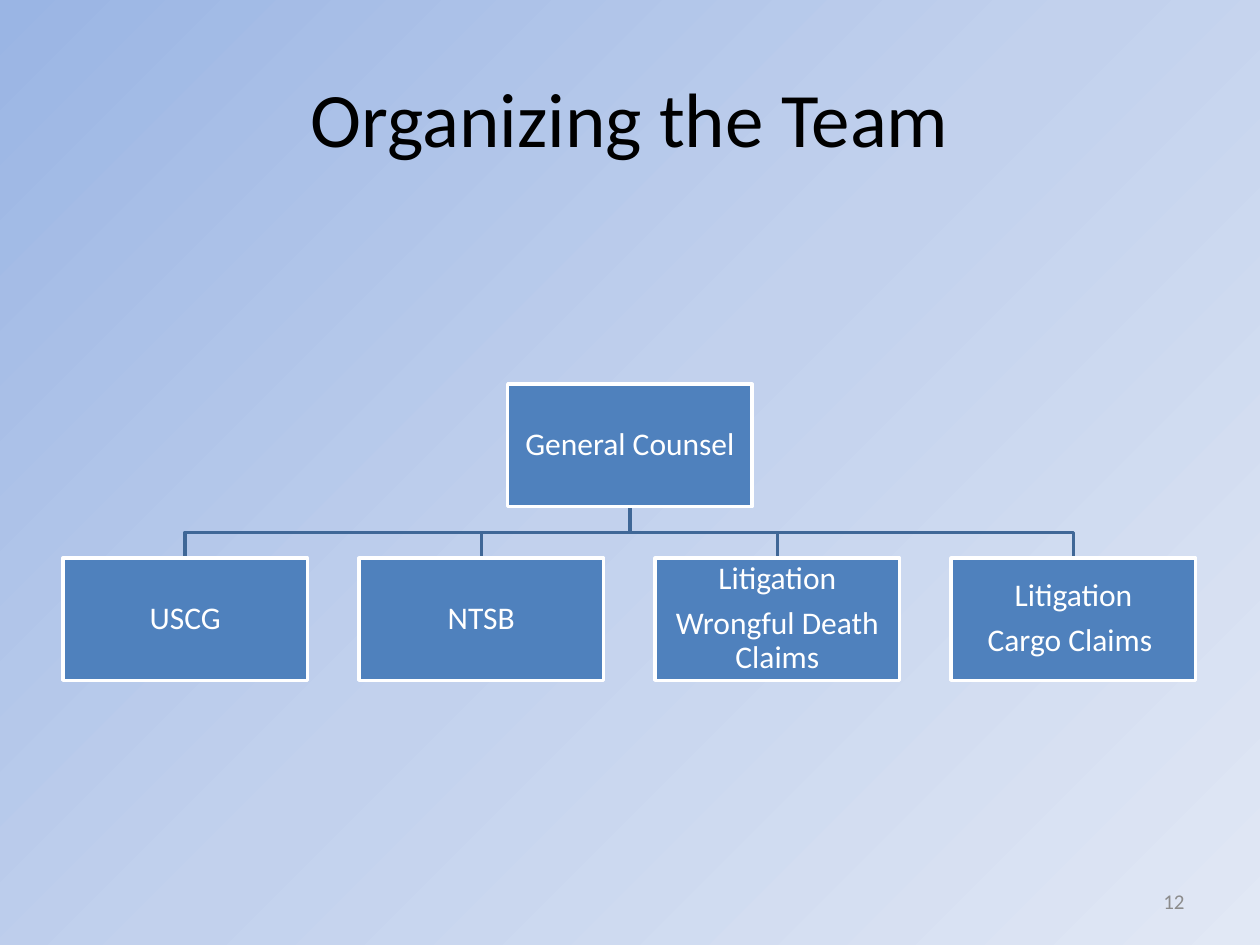
import copy
from dataclasses import dataclass

import pptx
import pptx.dml.color
import pptx.enum.shapes
import pptx.enum.text
import pptx.util

Inches, Pt = pptx.util.Inches, pptx.util.Pt
RGBColor = pptx.dml.color.RGBColor
ALIGN = pptx.enum.text.PP_ALIGN
MIDDLE = pptx.enum.text.MSO_ANCHOR.MIDDLE

BLACK = RGBColor(0x00, 0x00, 0x00)
WHITE = RGBColor(0xFF, 0xFF, 0xFF)
GRAY = RGBColor(0x8C, 0x8C, 0x8C)
BOX_BLUE = RGBColor(0x4F, 0x81, 0xBD)
LINE_BLUE = RGBColor(0x3F, 0x67, 0x97)
BACKGROUND = [
    (0, RGBColor(0x9A, 0xB5, 0xE4)),
    (0.5, RGBColor(0xC2, 0xD1, 0xED)),
    (1, RGBColor(0xE1, 0xE8, 0xF5)),
]

BOX_W, BOX_H = 1.94, 0.97
ROOT_TOP, TEAM_TOP = 3.05, 4.43
TEAM_LEFT, TEAM_PITCH = 0.5, 2.35


@dataclass
class Box:
    left: float
    top: float
    lines: list[str]

    @property
    def center(self) -> float:
        return self.left + BOX_W / 2


def write_text(sp, lines: list[str], size: float, color: RGBColor, align,
               margin: float | None = None, **spacing) -> None:
    tf = sp.text_frame
    tf.word_wrap = True
    tf.vertical_anchor = MIDDLE
    if margin is not None:
        for side in ("left", "right", "top", "bottom"):
            setattr(tf, f"margin_{side}", Inches(margin))
    for i, line in enumerate(lines):
        p = tf.add_paragraph() if i else tf.paragraphs[0]
        for name, value in {"alignment": align, **spacing}.items():
            setattr(p, name, value)
        r = p.add_run()
        r.text = line
        for name, value in {"name": "Calibri", "size": Pt(size)}.items():
            setattr(r.font, name, value)
        r.font.color.rgb = color


def add_text(s, left: float, top: float, width: float, height: float,
             text: str, size: float, color: RGBColor, align) -> None:
    sp = s.shapes.add_textbox(Inches(left), Inches(top), Inches(width), Inches(height))
    write_text(sp, [text], size, color, align)


def draw_box(s, box: Box) -> None:
    sp = s.shapes.add_shape(pptx.enum.shapes.MSO_SHAPE.RECTANGLE, Inches(box.left),
                            Inches(box.top), Inches(BOX_W), Inches(BOX_H))
    sp.shadow.inherit = False
    sp.fill.solid()
    sp.fill.fore_color.rgb = BOX_BLUE
    sp.line.color.rgb = WHITE
    sp.line.width = Pt(2)
    write_text(sp, box.lines, 18, WHITE, ALIGN.CENTER, margin=0.01,
               line_spacing=0.9, space_after=Pt(6.3))


def draw_branch(s, parent: Box, child: Box) -> None:
    start = parent.top + BOX_H
    bend = (start + child.top) / 2
    points = [(parent.center, start), (parent.center, bend),
              (child.center, bend), (child.center, child.top)]
    (x, y), *rest = [(Inches(px), Inches(py)) for px, py in points]
    builder = s.shapes.build_freeform(x, y)
    builder.add_line_segments(rest, close=False)
    sp = builder.convert_to_shape()
    sp.shadow.inherit = False
    sp.fill.background()
    sp.line.color.rgb = LINE_BLUE
    sp.line.width = Pt(2)


def paint_background(s) -> None:
    fill = s.background.fill
    fill.gradient()
    fill.gradient_angle = 315
    stops = s.background._cSld.xpath(".//a:gs")
    stops[0].addnext(copy.deepcopy(stops[0]))
    for stop, (position, color) in zip(fill.gradient_stops, BACKGROUND):
        stop.position = position
        stop.color.rgb = color


def main() -> None:
    prs = pptx.Presentation()
    prs.slide_width, prs.slide_height = Inches(10), Inches(7.5)
    s = prs.slides.add_slide(prs.slide_layouts[6])
    paint_background(s)

    # Title
    add_text(s, 0.5, 0.3, 9, 1.25, "Organizing the Team", 44, BLACK, ALIGN.CENTER)

    # Organization chart: branches lie behind the boxes
    counsel = Box(5 - BOX_W / 2, ROOT_TOP, ["General Counsel"])
    labels = [["USCG"], ["NTSB"], ["Litigation", "Wrongful Death Claims"],
              ["Litigation", "Cargo Claims "]]
    teams = [Box(TEAM_LEFT + i * TEAM_PITCH, TEAM_TOP, lines)
             for i, lines in enumerate(labels)]
    for team in teams:
        draw_branch(s, counsel, team)
    for box in [counsel, *teams]:
        draw_box(s, box)

    # Slide number
    add_text(s, 7.17, 6.95, 2.33, 0.4, "12", 12, GRAY, ALIGN.RIGHT)

    prs.save("out.pptx")


if __name__ == "__main__":
    main()
